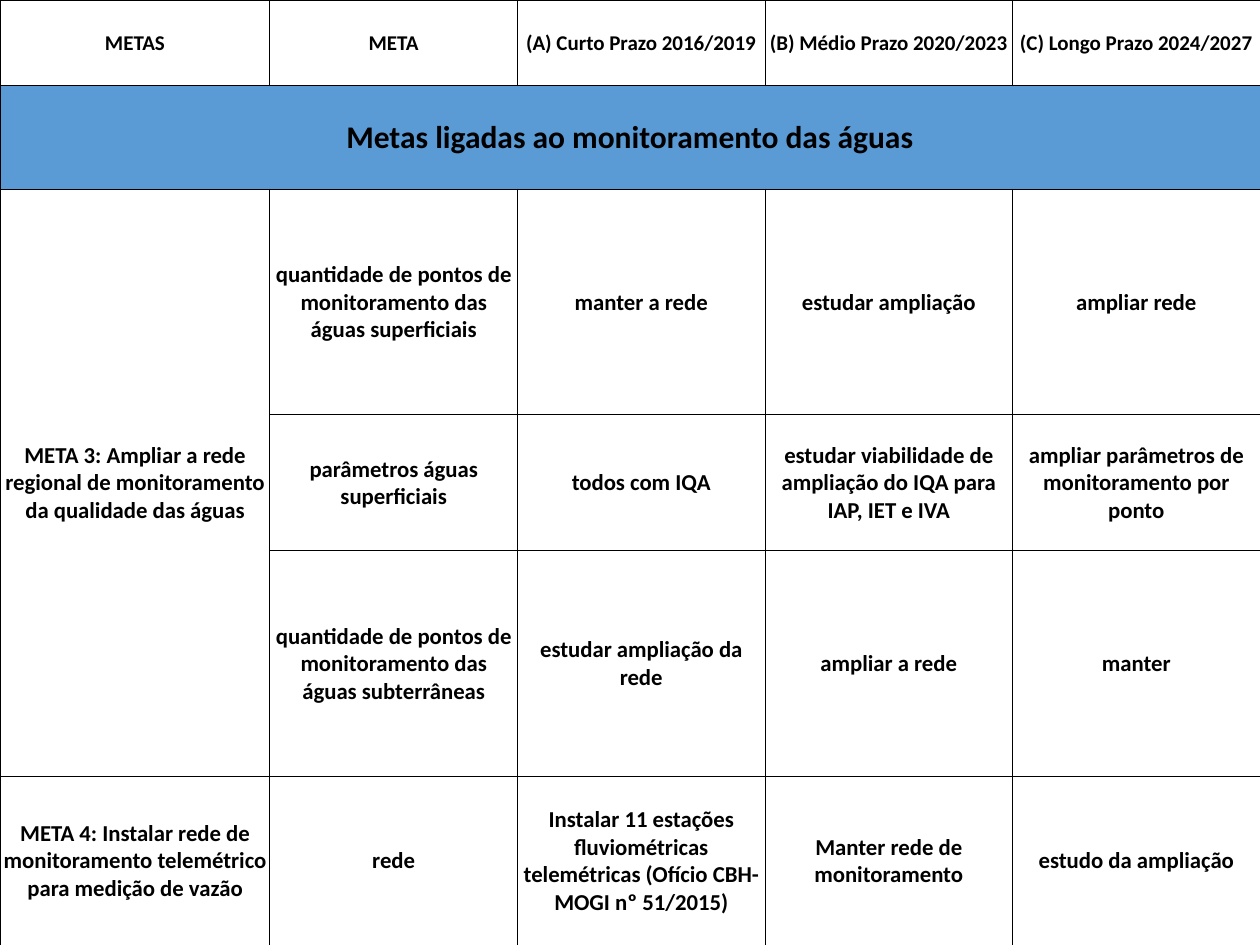
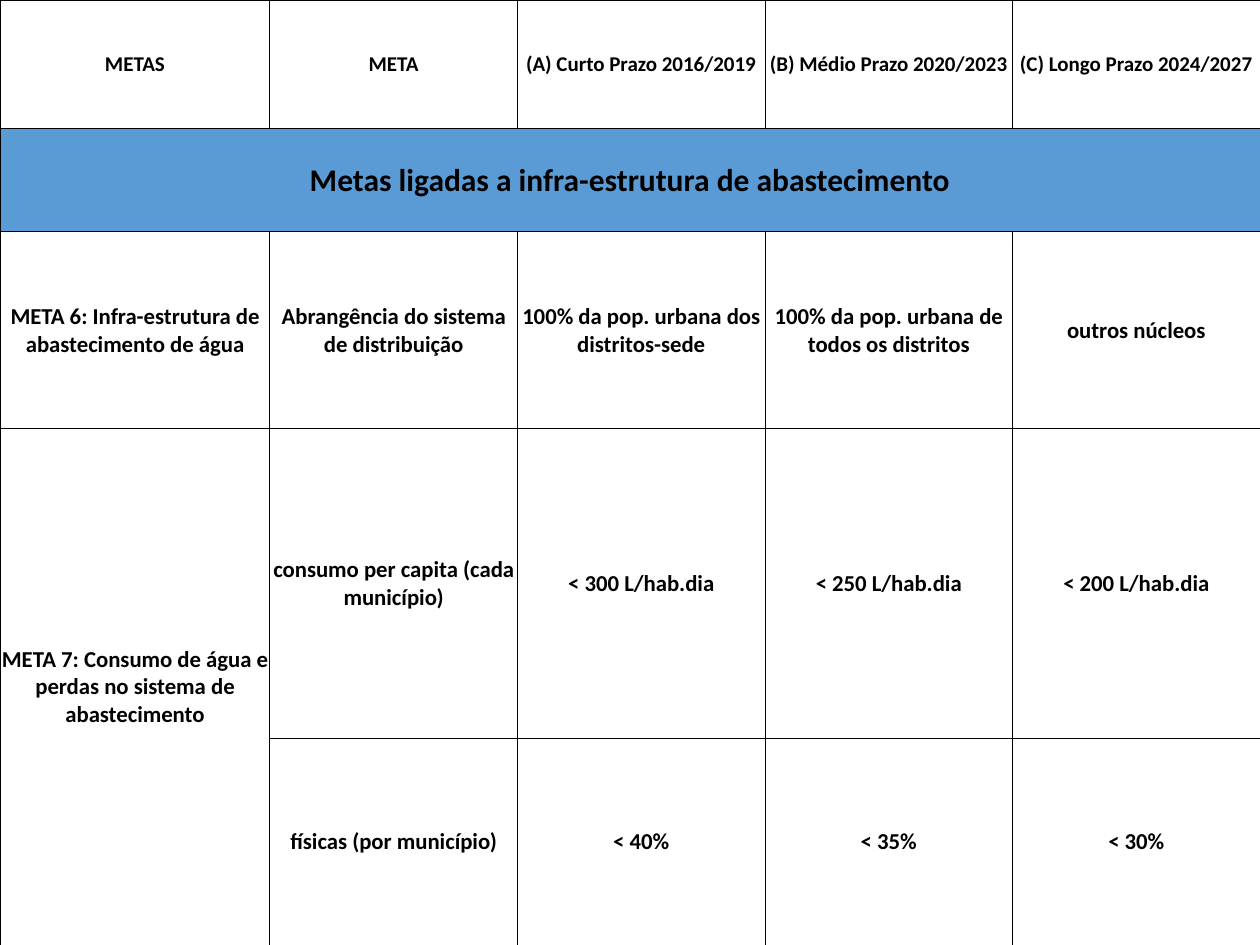
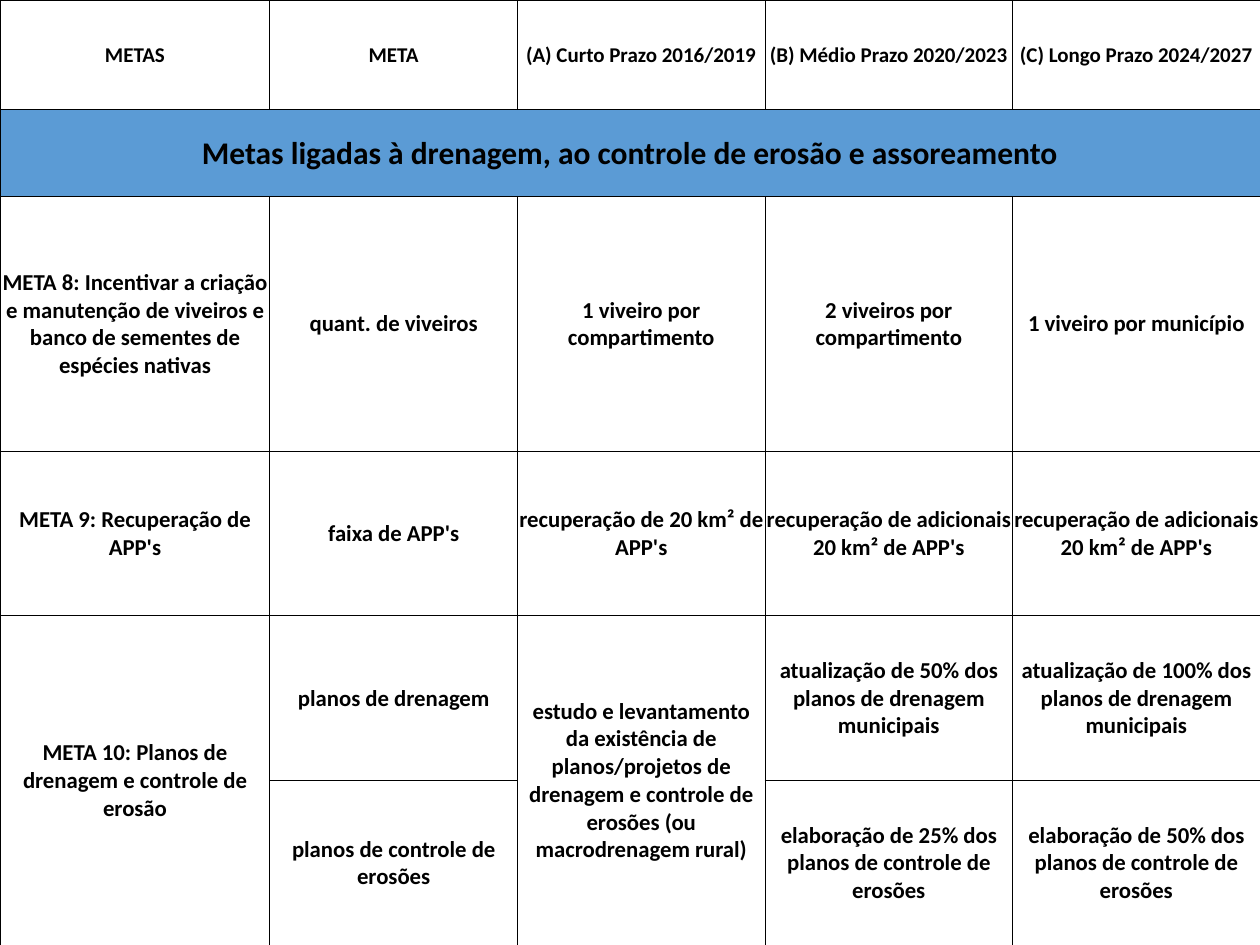
from lxml.etree import SubElement
from pptx import Presentation
from pptx.dml.color import RGBColor
from pptx.enum.text import MSO_ANCHOR, PP_ALIGN
from pptx.oxml.ns import qn
from pptx.util import Cm, Pt

BLACK = RGBColor(0x00, 0x00, 0x00)
BAND_BLUE = RGBColor(0x5B, 0x9B, 0xD5)
FONT = "Calibri"
WIDTH, HEIGHT = Cm(25.4), Cm(19.05)
COLUMN_WIDTHS = [5.44] + [4.99] * 4
HEADER = ["METAS", "META", "(A) Curto Prazo 2016/2019",
          "(B) Médio Prazo 2020/2023", "(C) Longo Prazo 2024/2027"]
HEADER_SIZE, BAND_SIZE, BODY_SIZE = Pt(12), Pt(18), Pt(13)

# Band title, row heights in cm and goals; None continues the cell above
SLIDES = [
    ("Metas ligadas ao monitoramento das águas",
     [1.73, 2.08, 4.55, 2.74, 4.55, 3.4],
     [["META 3: Ampliar a rede regional de monitoramento da qualidade das águas",
       "quantidade de pontos de monitoramento das águas superficiais",
       "manter a rede", "estudar ampliação", "ampliar rede"],
      [None, "parâmetros águas superficiais", "todos com IQA",
       "estudar viabilidade de ampliação do IQA para IAP, IET e IVA",
       "ampliar parâmetros de monitoramento por ponto"],
      [None, "quantidade de pontos de monitoramento das águas subterrâneas",
       "estudar ampliação da rede", "ampliar a rede", "manter"],
      ["META 4: Instalar rede de monitoramento telemétrico para medição de vazão",
       "rede",
       "Instalar 11 estações fluviométricas telemétricas (Ofício CBH-MOGI nº 51/2015)",
       "Manter rede de monitoramento", "estudo da ampliação"]]),
    ("Metas ligadas a infra-estrutura de abastecimento",
     [2.59, 2.08, 3.96, 6.25, 4.17],
     [["META 6: Infra-estrutura de abastecimento de água",
       "Abrangência do sistema de distribuição",
       "100% da pop. urbana dos distritos-sede",
       "100% da pop. urbana de todos os distritos", "outros núcleos"],
      ["META 7: Consumo de água e perdas no sistema de abastecimento",
       "consumo per capita (cada município)",
       "< 300 L/hab.dia", "< 250 L/hab.dia", "< 200 L/hab.dia"],
      [None, "físicas (por município)", "< 40%", "< 35%", "< 30%"]]),
    ("Metas ligadas à drenagem, ao controle de erosão e assoreamento",
     [2.21, 1.75, 5.13, 3.32, 3.32, 3.32],
     [["META 8: Incentivar a criação e manutenção de viveiros e banco de "
       "sementes de espécies nativas",
       "quant. de viveiros", "1 viveiro por compartimento",
       "2 viveiros por compartimento", "1 viveiro por município"],
      ["META 9: Recuperação de APP's", "faixa de APP's",
       "recuperação de 20 km² de APP's",
       "recuperação de adicionais 20 km² de APP's",
       "recuperação de adicionais 20 km² de APP's"],
      ["META 10: Planos de drenagem e controle de erosão",
       "planos de drenagem",
       "estudo e levantamento da existência de planos/projetos de drenagem "
       "e controle de erosões (ou macrodrenagem rural)",
       "atualização de 50% dos planos de drenagem municipais",
       "atualização de 100% dos planos de drenagem municipais"],
      [None, "planos de controle de erosões", None,
       "elaboração de 25% dos planos de controle de erosões",
       "elaboração de 50% dos planos de controle de erosões"]]),
]


def add_borders(cell):
    tc_pr = cell._tc.get_or_add_tcPr()
    for side in ("a:lnL", "a:lnR", "a:lnT", "a:lnB"):
        ln = SubElement(tc_pr, qn(side), w=str(Pt(0.5)))
        fill = SubElement(ln, qn("a:solidFill"))
        SubElement(fill, qn("a:srgbClr"), val=str(BLACK))


def write_cell(cell, text, size):
    cell.text_frame.text = text
    p = cell.text_frame.paragraphs[0]
    p.alignment = PP_ALIGN.CENTER
    font = p.runs[0].font
    font.name, font.size, font.bold = FONT, size, True
    font.color.rgb = BLACK


prs = Presentation()
prs.slide_width, prs.slide_height = WIDTH, HEIGHT

for band, heights, goals in SLIDES:
    s = prs.slides.add_slide(prs.slide_layouts[6])
    table = s.shapes.add_table(len(heights), len(HEADER), 0, 0, WIDTH, HEIGHT).table
    table.first_row = table.horz_banding = False
    for column, width in zip(table.columns, COLUMN_WIDTHS):
        column.width = Cm(width)
    for row, height in zip(table.rows, heights):
        row.height = Cm(height)

    # Frame of every cell
    for cell in table.iter_cells():
        add_borders(cell)
        cell.fill.background()
        cell.vertical_anchor = MSO_ANCHOR.MIDDLE
        cell.margin_left = cell.margin_right = cell.margin_top = Cm(0.02)
        cell.margin_bottom = 0

    # Header row
    for c, text in enumerate(HEADER):
        write_cell(table.cell(0, c), text, HEADER_SIZE)

    # Coloured band across the table
    band_cell = table.cell(1, 0)
    band_cell.merge(table.cell(1, len(HEADER) - 1))
    band_cell.fill.solid()
    band_cell.fill.fore_color.rgb = BAND_BLUE
    write_cell(band_cell, band, BAND_SIZE)

    # Goals, merged downwards over the None cells
    for c, texts in enumerate(zip(*goals)):
        for r, text in enumerate(texts):
            if text is None:
                continue
            last = r
            while last + 1 < len(texts) and texts[last + 1] is None:
                last += 1
            cell = table.cell(r + 2, c)
            if last > r:
                cell.merge(table.cell(last + 2, c))
            write_cell(cell, text, BODY_SIZE)

prs.save("out.pptx")
